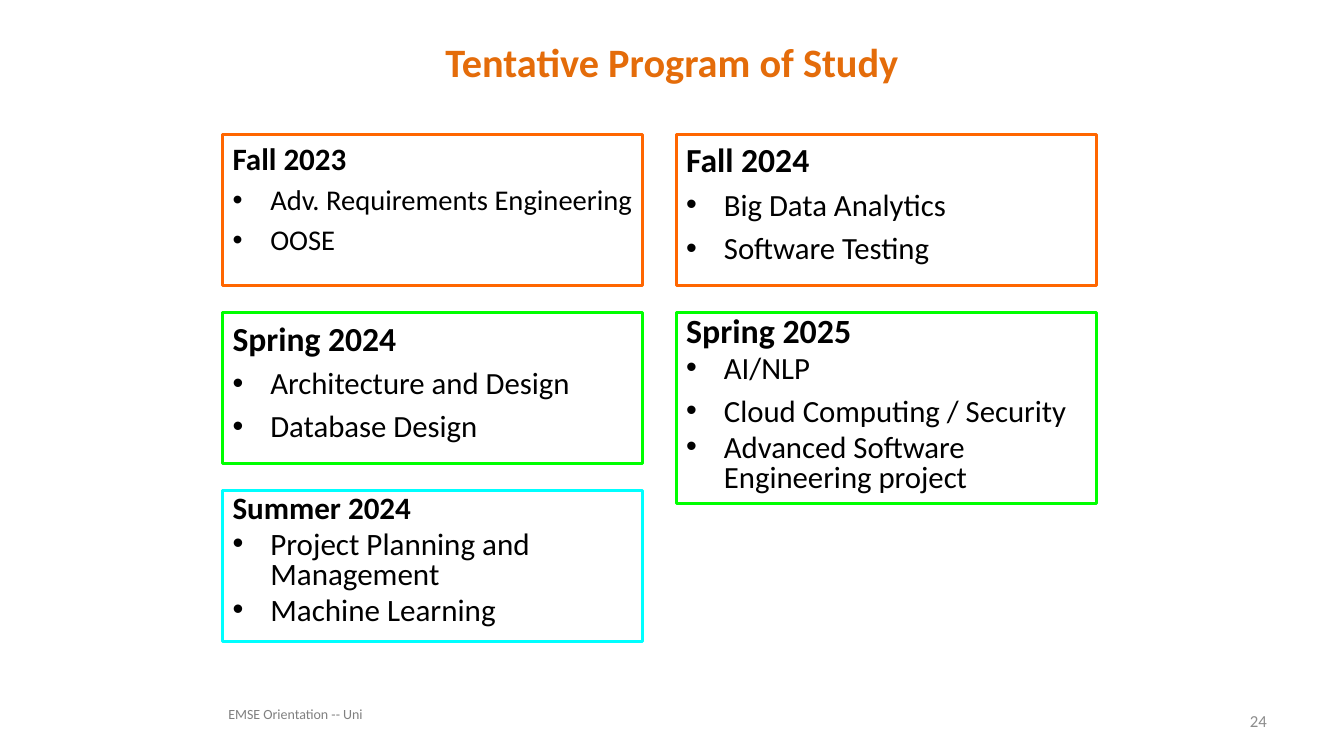
from dataclasses import dataclass
from lxml import etree
from pptx import Presentation
from pptx import util as u
from pptx.dml.color import RGBColor
from pptx.enum import shapes, text
from pptx.oxml.ns import qn


@dataclass(frozen=True)
class Theme:
    font: str = "Calibri"
    title: str = "E46C0A"
    body: str = "000000"
    footer: str = "808080"
    number: str = "8C8C8C"
    fall: str = "FF6600"
    spring: str = "00FF00"
    summer: str = "00FFFF"
    title_size: float = 28.8
    footer_size: float = 10
    number_size: float = 12
    border: float = 2.25
    indent: float = 27


THEME = Theme()
TIGHT = 0.8

TERMS = [
    dict(column=0, row=0, height=108, color=THEME.fall, sizes=(22.2, 20.4),
         lines=[("Fall 2023", 1), ("Adv. Requirements Engineering", 1), ("OOSE", 1)]),
    dict(column=0, row=1, height=108, color=THEME.spring, sizes=(24, 22),
         lines=[("Spring 2024", 1), ("Architecture and Design", 1), ("Database Design", 1)]),
    dict(column=0, row=2, height=108, color=THEME.summer, sizes=(22.2, 22.2),
         lines=[("Summer 2024", TIGHT), ("Project Planning and Management", TIGHT),
                ("Machine Learning", TIGHT)]),
    dict(column=1, row=0, height=108, color=THEME.fall, sizes=(24, 22),
         lines=[("Fall 2024", 1), ("Big Data Analytics", 1), ("Software Testing", 1)]),
    dict(column=1, row=1, height=136.5, color=THEME.spring, sizes=(24.2, 22),
         lines=[("Spring 2025", TIGHT), ("AI/NLP", TIGHT), ("Cloud Computing / Security", 1),
                ("Advanced Software Engineering project", TIGHT)]),
]


def set_all(target, values):
    for name, value in values.items():
        setattr(target, name, value)


def points(*lengths):
    return [u.Pt(length) for length in lengths]


def write(paragraph, words, size, color, bold=False):
    run = paragraph.add_run()
    run.text = words
    set_all(run.font, dict(name=THEME.font, size=u.Pt(size), bold=bold))
    run.font.color.rgb = RGBColor.from_string(color)


def add_title(slide, box):
    title = slide.shapes.title
    set_all(title, dict(zip(("left", "top", "width", "height"), points(*box))))
    set_all(title.text_frame, dict(vertical_anchor=text.MSO_ANCHOR.MIDDLE,
                                   auto_size=text.MSO_AUTO_SIZE.NONE, word_wrap=True))
    paragraph = title.text_frame.paragraphs[0]
    paragraph.alignment = text.PP_ALIGN.CENTER
    write(paragraph, "Tentative Program of Study", THEME.title_size, THEME.title, True)


def add_term(slide, box, color, sizes, lines):
    shape = slide.shapes.add_shape(shapes.MSO_SHAPE.RECTANGLE, *points(*box))
    shape.shadow.inherit = False
    shape.fill.background()
    shape.line.color.rgb = RGBColor.from_string(color)
    shape.line.width = u.Pt(THEME.border)
    frame = shape.text_frame
    set_all(frame, dict(word_wrap=True, vertical_anchor=text.MSO_ANCHOR.TOP,
                        margin_right=u.Pt(6)))
    for index, (words, spacing) in enumerate(lines):
        heading = index == 0
        size = sizes[0] if heading else sizes[1]
        paragraph = frame.paragraphs[0] if heading else frame.add_paragraph()
        set_all(paragraph, dict(alignment=text.PP_ALIGN.LEFT, line_spacing=float(spacing),
                                space_before=u.Pt(size * 0.2)))
        properties = paragraph._p.get_or_add_pPr()
        properties.set("marL", str(u.Pt(THEME.indent)))
        properties.set("indent", str(-u.Pt(THEME.indent)))
        if not heading:
            etree.SubElement(properties, qn("a:buFont")).set("typeface", "Arial")
            etree.SubElement(properties, qn("a:buChar")).set("char", "•")
        write(paragraph, words, size, THEME.body, heading)


def add_terms(slide, box):
    left, top, width, column_gap, row_pitch = box
    for term in TERMS:
        term_box = (left + term["column"] * (width + column_gap),
                    top + term["row"] * row_pitch, width, term["height"])
        add_term(slide, term_box, term["color"], term["sizes"], term["lines"])


def add_footer_text(slide, box, words, size, color, alignment, anchor):
    frame = slide.shapes.add_textbox(*points(*box)).text_frame
    set_all(frame, dict(word_wrap=True, vertical_anchor=anchor))
    paragraph = frame.paragraphs[0]
    paragraph.alignment = alignment
    write(paragraph, words, size, color)


def add_footer(slide, box):
    left, top, width, height = box
    add_footer_text(slide, (left + width - 224, top, 224, height), "24", THEME.number_size,
                    THEME.number, text.PP_ALIGN.RIGHT, text.MSO_ANCHOR.MIDDLE)
    add_footer_text(slide, (left, top, 168, height), "EMSE Orientation -- Uni",
                    THEME.footer_size, THEME.footer, text.PP_ALIGN.LEFT, text.MSO_ANCHOR.TOP)


def main():
    presentation = Presentation()
    set_all(presentation, dict(slide_width=u.Pt(960), slide_height=u.Pt(540)))
    slide = presentation.slides.add_slide(presentation.slide_layouts.get_by_name("Title Only"))
    add_title(slide, (48, 21.6, 864, 44.6))
    add_terms(slide, (159, 96, 300, 24, 127.2))
    add_footer(slide, (156, 500.4, 756, 28.8))
    presentation.save("out.pptx")


if __name__ == "__main__":
    main()
